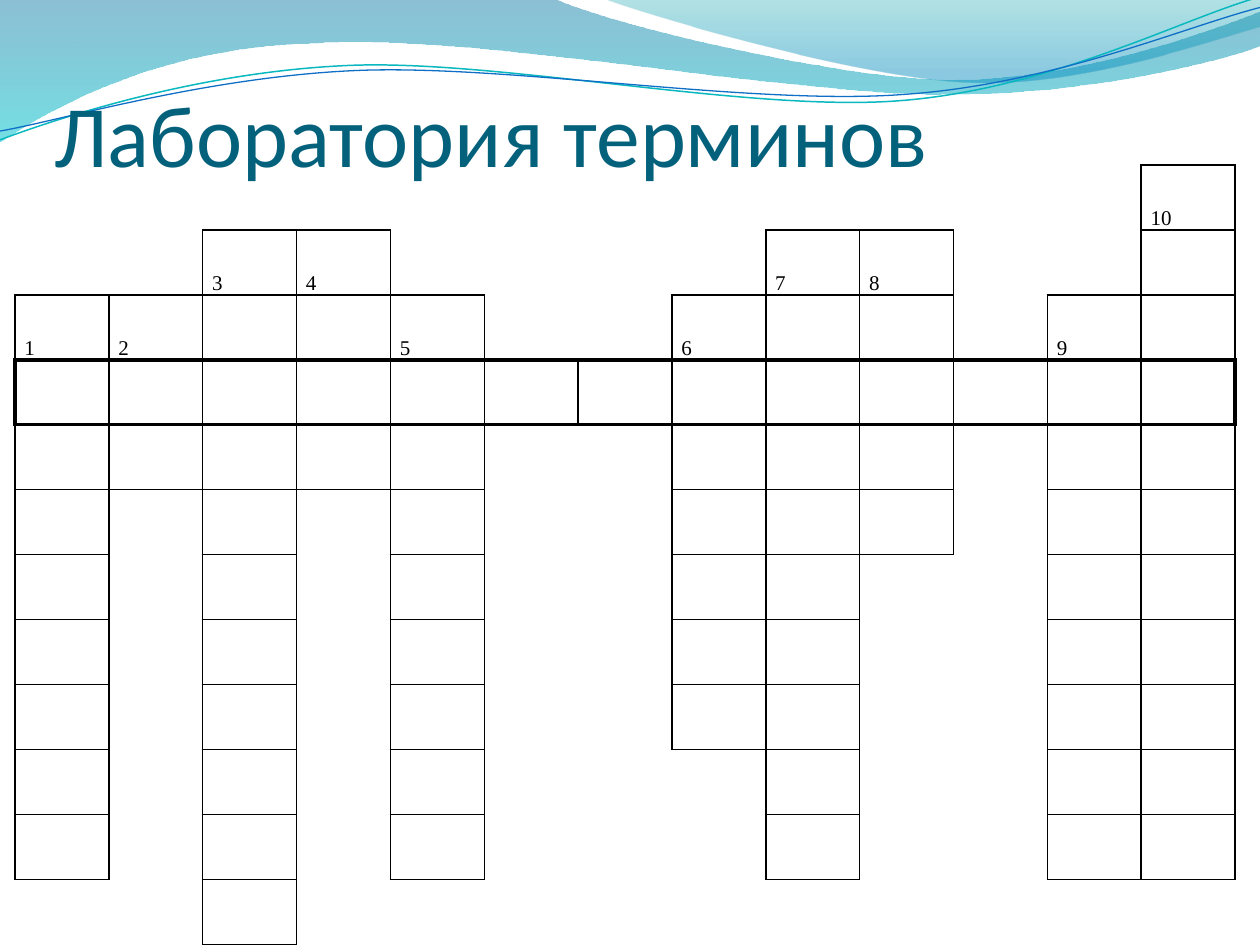
import math

from lxml import etree
from pptx import Presentation
from pptx.dml.color import RGBColor
from pptx.enum import text
from pptx.oxml import ns
from pptx.util import Pt

TITLE = "Лаборатория терминов"
TITLE_BLUE = RGBColor(0x04, 0x61, 0x7B)
BLACK = RGBColor(0, 0, 0)
TEAL = RGBColor(0x0A, 0xB8, 0xBF)
BLUE = RGBColor(0x0F, 0x6F, 0xC6)

# Crossword: column -> (clue number, first row, last row)
WORDS = {
    0: ("1", 2, 10), 1: ("2", 2, 4), 2: ("3", 1, 11), 3: ("4", 1, 4),
    4: ("5", 2, 10), 7: ("6", 2, 8), 8: ("7", 1, 10), 9: ("8", 1, 5),
    11: ("9", 2, 10), 12: ("10", 0, 10),
}
ROWS, COLS, KEY_ROW = 12, 13, 3
GRID_LEFT, GRID_TOP, CELL_WIDTH, CELL_HEIGHT = 8.57, 94.3, 53.64, 37.13
THIN, THICK = 1, 2.25

# Outlines: start point, then steps of one point (line) or three (curve)
# Waves: outline, gradient stops (position, colour, opacity in %)
WAVES = [
    ([[(0, 0)], [(316.8, -0.7)],
      [(342.7, 12.2), (478.1, 45.4), (545.8, 45.4)],
      [(614.2, 45.4), (689.8, 18.7), (720, 6.5)],
      [(720.7, 25.9)],
      [(707.8, 31.7), (626.4, 54.7), (537.1, 54)],
      [(447.8, 54), (275, 20.2), (185, 24.5)],
      [(92.9, 25.9), (33.1, 59.8), (-0.7, 81.4)],
      [(0, 0)]],
     [(0, RGBColor(0x00, 0x74, 0xA1), 45), (1, RGBColor(0x00, 0xC6, 0xCF), 55)]),
    ([[(344.9, -0.7)],
      [(366.5, 7.9), (491, 44.6), (553.7, 46.8)],
      [(616.3, 49.7), (691.9, 23), (720, 15.1)],
      [(720, 0)], [(344.9, -0.7)]],
     [(0, RGBColor(0x00, 0xA1, 0xA9), 30), (0.8, RGBColor(0x00, 0x8B, 0xBF), 45)]),
]
# Ripples: outline as seen after tilting, centre, colour, width
RIPPLES = [
    ([[(0, 79.9)],
      [(34.6, 67), (113.8, 41), (199.4, 37.4)],
      [(284.4, 33.8), (427, 64.1), (513.4, 57.6)],
      [(599.8, 51.1), (675.4, 10.8), (718.6, -1.4)]], (359.3, 41.4), TEAL, 0.85),
    ([[(0, 74.9)],
      [(33.8, 69.1), (118.1, 43.9), (203.8, 40.3)],
      [(290.2, 36.7), (429.8, 60.5), (516.2, 54)],
      [(601.9, 48.2), (677.5, 15.1), (720, 4.3)]], (359.6, 42.5), BLUE, 0.75),
]
TILT = -2.7


def draw_outline(slide, outline, close):
    points = [(Pt(x), Pt(y)) for step in outline for x, y in step]
    builder = slide.shapes.build_freeform(*points[0])
    builder.add_line_segments(points[1:], close=close)
    shape = builder.convert_to_shape()
    shape.shadow.inherit = False
    # Join the three lines of each curved step into one cubic curve
    lines = iter(shape._element.xpath(".//a:lnTo"))
    for step in outline[1:]:
        first, *others = [next(lines) for _ in step]
        if others:
            first.tag = ns.qn("a:cubicBezTo")
        for line in others:
            first.append(line[0])
            line.getparent().remove(line)
    return shape


def draw_wave(slide, outline, stops):
    wave = draw_outline(slide, outline, True)
    wave.line.fill.background()
    wave.fill.gradient()
    wave.fill.gradient_angle = 270
    for stop, (position, color, _) in zip(wave.fill.gradient_stops, stops):
        stop.position, stop.color.rgb = position, color
    for color, (_, _, opacity) in zip(wave._element.xpath(".//a:gs/a:srgbClr"), stops):
        etree.SubElement(color, ns.qn("a:alpha"), val=str(opacity * 1000))


def rotate(point, center, degrees):
    angle = math.radians(degrees)
    dx, dy = point[0] - center[0], point[1] - center[1]
    return (center[0] + dx * math.cos(angle) - dy * math.sin(angle),
            center[1] + dx * math.sin(angle) + dy * math.cos(angle))


def draw_ripple(slide, outline, center, color, width):
    level = [[rotate(point, center, -TILT) for point in step] for step in outline]
    ripple = draw_outline(slide, level, False)
    ripple.rotation = TILT
    ripple.fill.background()
    ripple.line.color.rgb = color
    ripple.line.width = Pt(width)


def in_grid(row, col):
    if not (0 <= row < ROWS and 0 <= col < COLS):
        return False
    _, first, last = WORDS.get(col, ("", KEY_ROW, KEY_ROW))
    return first <= row <= last


def edge_width(row, col, d_row, d_col):
    """Width of the edge towards a neighbour; 0 between two blank squares."""
    other = (row + d_row, col + d_col)
    if not (in_grid(row, col) or in_grid(*other)):
        return 0
    key_edge = d_row and KEY_ROW in (row, other[0])
    key_end = row == KEY_ROW and other[1] in (-1, COLS)
    return THICK if key_edge or key_end else THIN


def set_border(cell, tag, width):
    line = etree.SubElement(cell._tc.get_or_add_tcPr(), ns.qn(tag), w=str(Pt(width)))
    if width:
        fill = etree.SubElement(line, ns.qn("a:solidFill"))
        etree.SubElement(fill, ns.qn("a:srgbClr"), val=str(BLACK))
    else:
        etree.SubElement(line, ns.qn("a:noFill"))


def draw_crossword(slide):
    grid = slide.shapes.add_table(
        ROWS, COLS, Pt(GRID_LEFT), Pt(GRID_TOP),
        Pt(COLS * CELL_WIDTH), Pt(ROWS * CELL_HEIGHT)).table
    grid.first_row = grid.horz_banding = False
    for column in grid.columns:
        column.width = Pt(CELL_WIDTH)
    for line in grid.rows:
        line.height = Pt(CELL_HEIGHT)
    sides = {"a:lnL": (0, -1), "a:lnR": (0, 1), "a:lnT": (-1, 0), "a:lnB": (1, 0)}
    for row in range(ROWS):
        for col in range(COLS):
            cell = grid.cell(row, col)
            for tag, direction in sides.items():
                set_border(cell, tag, edge_width(row, col, *direction))
            cell.fill.background()
            cell.vertical_anchor = text.MSO_ANCHOR.BOTTOM
            cell.margin_left = cell.margin_right = Pt(5.4)
            cell.margin_top = cell.margin_bottom = 0
            paragraph = cell.text_frame.paragraphs[0]
            number, first, _ = WORDS.get(col, ("", None, None))
            if row == first:
                paragraph.text = number
            paragraph.line_spacing = 1.15
            paragraph.font.name = "Times New Roman"
            paragraph.font.size = Pt(12)
            paragraph.font.color.rgb = BLACK


def place_title(slide):
    title = slide.shapes.title
    title.left, title.top, title.width, title.height = Pt(31), Pt(37.4), Pt(648), Pt(68.4)
    frame = title.text_frame
    frame.text = TITLE
    frame.auto_size = text.MSO_AUTO_SIZE.NONE
    frame.vertical_anchor = text.MSO_ANCHOR.BOTTOM
    frame.margin_left = frame.margin_right = frame.margin_bottom = 0
    paragraph = frame.paragraphs[0]
    paragraph.alignment = text.PP_ALIGN.LEFT
    paragraph.font.name = "Calibri"
    paragraph.font.size = Pt(50)
    paragraph.font.color.rgb = TITLE_BLUE
    # Bring the title in front of the waves
    slide.shapes._spTree.append(title._element)


def main():
    deck = Presentation()
    deck.slide_width, deck.slide_height = Pt(720), Pt(540)
    slide = deck.slides.add_slide(deck.slide_layouts[5])
    for wave in WAVES:
        draw_wave(slide, *wave)
    for ripple in RIPPLES:
        draw_ripple(slide, *ripple)
    place_title(slide)
    draw_crossword(slide)
    deck.save("out.pptx")


if __name__ == "__main__":
    main()
